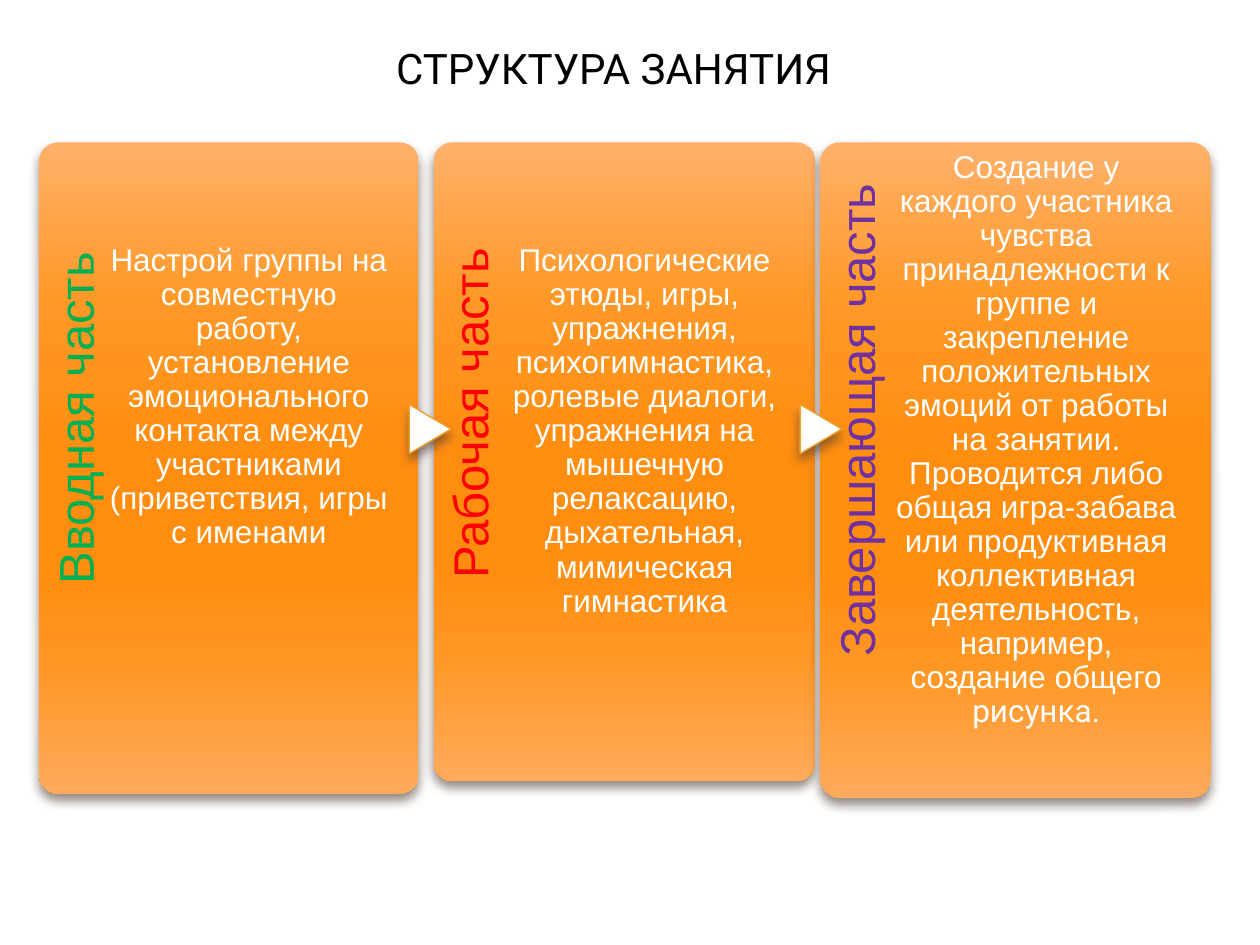
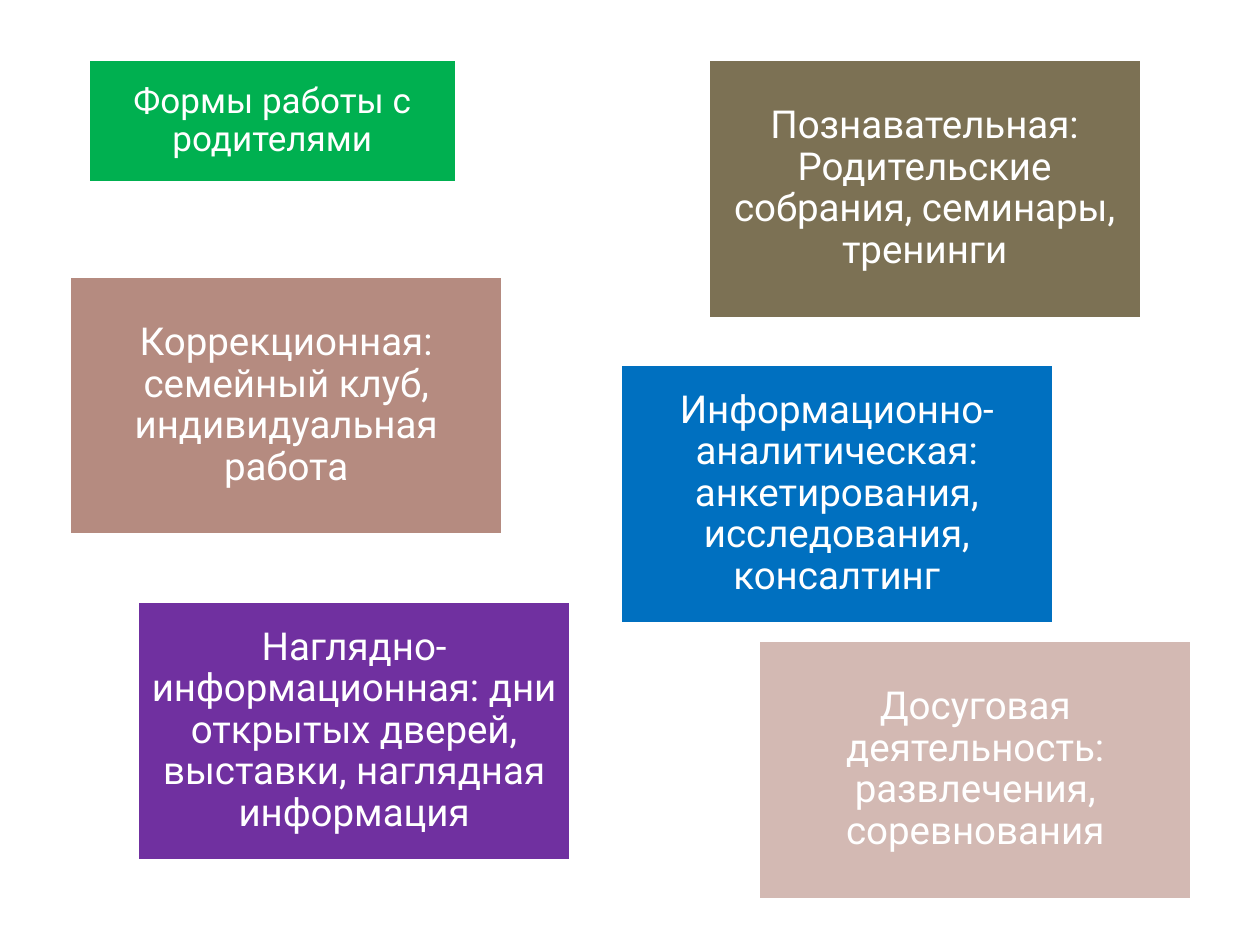
import pptx
import pptx.util
import pptx.dml.color
import pptx.enum.shapes
import pptx.enum.text
import pptx.oxml
import pptx.oxml.ns

Cm = pptx.util.Cm
Pt = pptx.util.Pt
Shape = pptx.enum.shapes.MSO_SHAPE
Anchor = pptx.enum.text.MSO_ANCHOR

HUES = {
    "white": "FFFFFF", "black": "000000", "green": "00B050", "red": "FF0000",
    "violet": "7030A0", "blue": "0070C0", "olive": "7C7154", "clay": "B58B80",
    "rose": "D3B9B3", "amber": "F0A22E", "shade": "4E3B30",
}
BLEND = [(0, "FFB16A"), (25, "FF9826"), (50, "FF8D0F"),
         (65, "FF8D0F"), (80, "FF9724"), (100, "FFAA5C")]
SPACE = pptx.oxml.ns.nsdecls("a")

PARTS = [
    ("Вводная часть", "green", 0.79, 7.65, 13.13, 1.88,
     "Настрой группы на совместную работу, установление эмоционального "
     "контакта между участниками (приветствия, игры с именами", ""),
    ("Рабочая часть", "red", 8.74, 7.7, 12.88, 1.88,
     "Психологические этюды, игры, упражнения, психогимнастика, ролевые "
     "диалоги, упражнения на мышечную релаксацию, дыхательная, мимическая "
     "гимнастика", ""),
    ("Завершающая часть", "violet", 16.54, 7.87, 13.21, 0,
     "Создание у каждого участника чувства принадлежности к группе и "
     "закрепление положительных эмоций от работы на занятии. Проводится либо "
     "общая игра-забава или продуктивная коллективная деятельность, например, "
     "создание общего ", "рисунка."),
]
FORMS = [
    ("blue", 12.5, 7.34, "Информационно-аналитическая: анкетирования, "
     "исследования, консалтинг"),
    ("olive", 14.27, 1.19, "Познавательная: Родительские собрания, семинары, "
     "тренинги"),
    ("violet", 2.77, 12.12, "Наглядно-информационная: дни открытых дверей, "
     "выставки, наглядная информация"),
    ("rose", 15.29, 12.9, "Досуговая деятельность: развлечения, соревнования"),
    ("clay", 1.4, 5.56, "Коррекционная: семейный клуб, индивидуальная работа"),
]


class Deck:
    sans = "Roboto"
    plain = "Arial"

    def __init__(self):
        self.show = pptx.Presentation()
        self.show.slide_width = Cm(25.4)
        self.show.slide_height = Cm(19.05)
        self.slide = None

    def page(self):
        self.slide = self.show.slides.add_slide(self.show.slide_layouts[5])

    def hue(self, name):
        return pptx.dml.color.RGBColor.from_string(HUES[name])

    def label(self, shape, text, size, hue, font, pads, anchor, tail=""):
        frame = shape.text_frame
        frame.word_wrap = True
        frame.auto_size = pptx.enum.text.MSO_AUTO_SIZE.NONE
        frame.vertical_anchor = anchor
        (frame.margin_left, frame.margin_top,
         frame.margin_right, frame.margin_bottom) = [Cm(pad) for pad in pads]
        para = frame.paragraphs[0]
        para.alignment = pptx.enum.text.PP_ALIGN.CENTER
        para.line_spacing = 0.9
        para.font.size = Pt(size)
        para.font.name = font
        para.font.color.rgb = self.hue(hue)
        para.add_run().text = text
        if tail:
            run = para.add_run()
            run.text = tail
            run.font.name = self.sans

    def paint(self, shape, fill, line, width):
        shape.fill.solid()
        shape.fill.fore_color.rgb = self.hue(fill)
        shape.line.color.rgb = self.hue(line)
        shape.line.width = Pt(width)

    def shade(self, shape):
        glow = shape._element.spPr.find(pptx.oxml.ns.qn("a:effectLst"))
        glow.append(pptx.oxml.parse_xml(
            f'<a:outerShdw {SPACE} blurRad="{Pt(6)}" dist="{Pt(4)}" '
            f'dir="5400000" algn="ctr" rotWithShape="0">'
            f'<a:srgbClr val="{HUES["shade"]}"><a:alpha val="60000"/>'
            f'</a:srgbClr></a:outerShdw>'))

    def shape(self, kind, left, top, width, height):
        shape = self.slide.shapes.add_shape(
            kind, Cm(left), Cm(top), Cm(width), Cm(height))
        shape.shadow.inherit = False
        return shape

    def title(self, text, left, top, width, height, size, hue):
        head = self.slide.shapes.title
        head.left, head.top = Cm(left), Cm(top)
        head.width, head.height = Cm(width), Cm(height)
        self.label(head, text, size, hue, self.sans, [0.2] * 4, Anchor.MIDDLE)
        return head

    def card(self, left, top, width, height):
        card = self.shape(Shape.ROUNDED_RECTANGLE, left, top, width, height)
        card.adjustments[0] = 0.05
        card.line.fill.background()
        card.fill.gradient()
        card.fill.gradient_angle = 270
        stops = card._element.spPr.find(".//" + pptx.oxml.ns.qn("a:gsLst"))
        for stop in list(stops):
            stops.remove(stop)
        for place, tone in BLEND:
            stops.append(pptx.oxml.parse_xml(
                f'<a:gs {SPACE} pos="{place * 1000}">'
                f'<a:srgbClr val="{tone}"/></a:gs>'))
        self.shade(card)

    def text(self, text, left, top, width, height, size, hue, pads,
             turn=0, tail=""):
        box = self.slide.shapes.add_textbox(
            Cm(left), Cm(top), Cm(width), Cm(height))
        box.rotation = turn
        self.label(box, text, size, hue, self.plain, pads, Anchor.TOP, tail)

    def arrow(self, mid, level):
        width, height = 0.99, 0.84
        arrow = self.shape(Shape.FLOWCHART_EXTRACT, mid - width / 2,
                           level - height / 2, width, height)
        arrow.rotation = 90
        self.paint(arrow, "white", "amber", 0.79)
        self.shade(arrow)

    def block(self, text, hue, left, top):
        block = self.shape(Shape.RECTANGLE, left, top, 8.74, 5.23)
        self.paint(block, hue, "white", 2)
        self.label(block, text, 22, "white", self.sans, [0.23] * 4,
                   Anchor.MIDDLE)


def main():
    deck = Deck()

    deck.page()
    deck.title("СТРУКТУРА ЗАНЯТИЯ", 7.37, 0.79, 10, 1.27, 24, "black")
    top = 2.87
    for name, hue, left, width, height, drop, body, tail in PARTS:
        deck.card(left, top, width, height)
        span, depth = height * 0.82, width * 0.2
        deck.text(name, left + (depth - span) / 2, top + (span - depth) / 2,
                  span, depth, 28, hue, (0, 0.25, 0.36, 0), turn=270)
        deck.text(body, left + width * 0.18, top + drop, width * 0.745,
                  height - drop, 18, "white", (0, 0.18, 0, 0), tail=tail)
    for mid in (8.67, 16.55):
        deck.arrow(mid, 8.65)

    deck.page()
    head = deck.title("Формы работы с родителями", 1.78, 1.19, 7.42, 2.49,
                      20, "white")
    deck.paint(head, "green", "white", 2)
    for hue, left, high, text in FORMS:
        deck.block(text, hue, left, high)

    deck.show.save("out.pptx")


if __name__ == "__main__":
    main()
